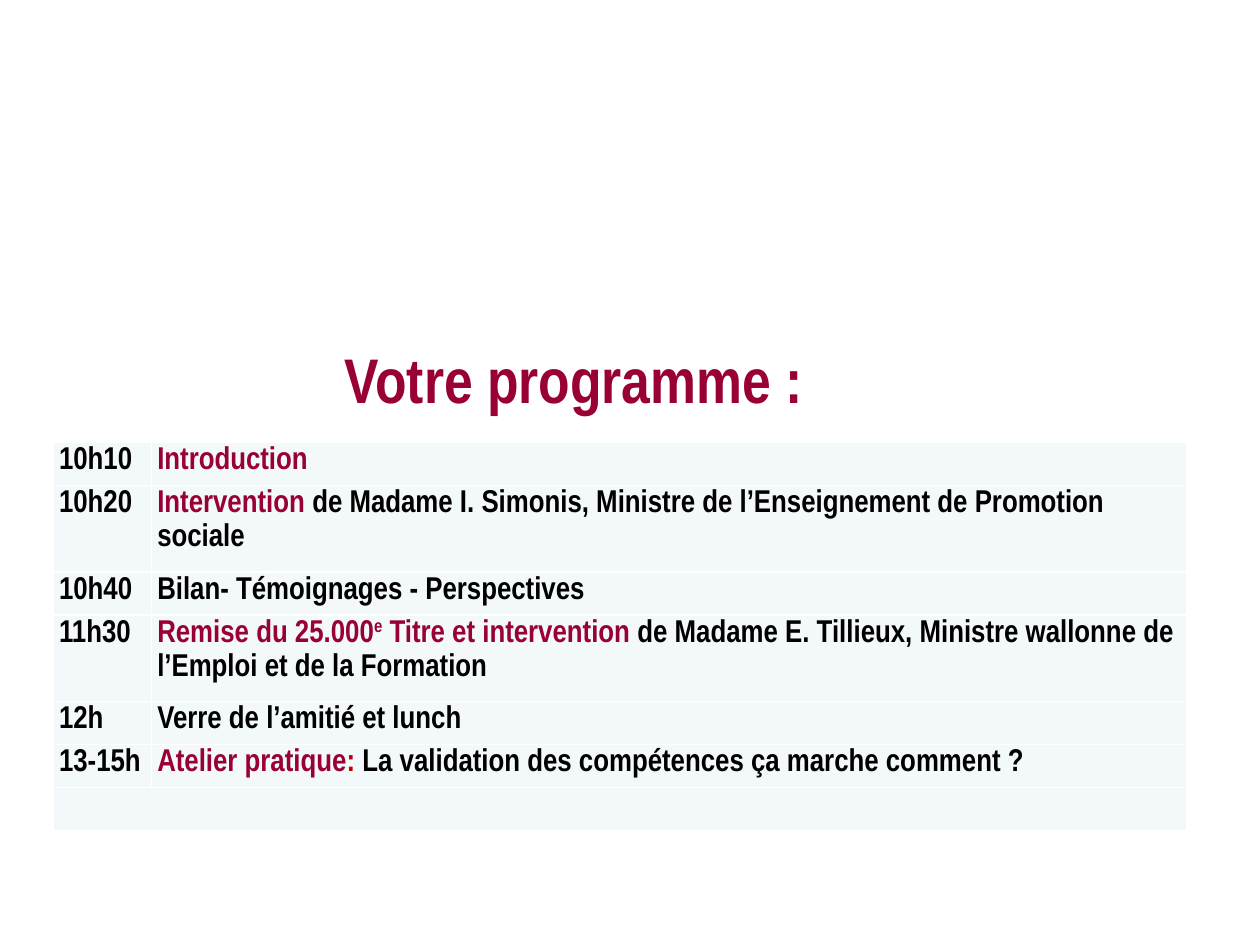
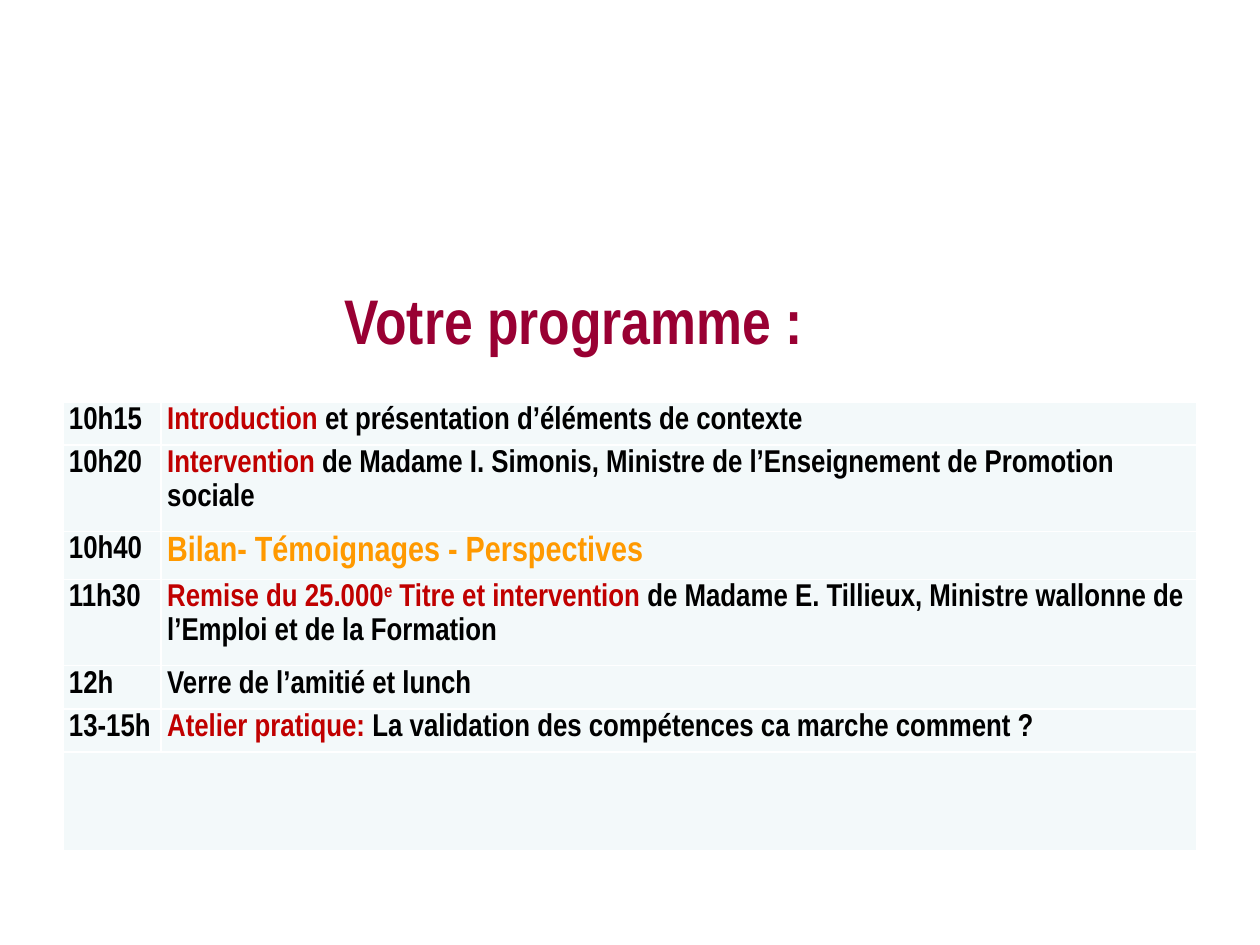
"""Build the two programme slides, each a title over a timetable."""
from lxml.etree import SubElement
from pptx import Presentation
from pptx.dml.color import RGBColor as Rgb
from pptx.enum.text import MSO_ANCHOR as Anchor, MSO_AUTO_SIZE as Auto, PP_ALIGN as Align
from pptx.oxml.ns import qn
from pptx.util import Cm, Pt

FACE = "Arial Narrow"
WINE, RED, GOLD = "990033", "C00000", "FF9900"
BLACK, WHITE, PALE = "000000", "FFFFFF", "F3F9FA"
LEFT, WIDE = 1.07, 22.86
COLS = (1.98, WIDE - 1.98)
LINE = 0.87


def paint(part, hue):
    """Set the colour of a font or a solid fill."""
    tint = part.color if hasattr(part, "color") else part.fore_color
    tint.rgb = Rgb.from_string(hue)


def style(para, size):
    """Set the shared face, weight and size on a paragraph."""
    font = para.font
    font.name, font.size, font.bold = FACE, Pt(size), True


def add_title(slide, top):
    """Place the title and format it."""
    box = slide.shapes.title
    box.left, box.top, box.width, box.height = Cm(LEFT), Cm(top), Cm(21), Cm(2.82)
    frame = box.text_frame
    frame.text = "Votre programme :"
    frame.auto_size, frame.vertical_anchor = Auto.NONE, Anchor.TOP
    para = frame.paragraphs[0]
    para.alignment = Align.CENTER
    style(para, 36)
    paint(para.font, WINE)


def add_edges(cell):
    """Draw thin white borders round a cell, ahead of its fill."""
    props = cell._tc.get_or_add_tcPr()
    for spot, side in enumerate(("lnL", "lnR", "lnT", "lnB")):
        edge = SubElement(props, qn("a:" + side), w=str(Pt(1)))
        fill = SubElement(edge, qn("a:solidFill"))
        SubElement(fill, qn("a:srgbClr"), val=WHITE)
        props.insert(spot, edge)


def dress(cell):
    """Set the fill, margins and borders of a cell."""
    cell.fill.solid()
    paint(cell.fill, PALE)
    cell.margin_left = cell.margin_right = Cm(0.12)
    cell.margin_top = cell.margin_bottom = 0
    add_edges(cell)


def write(cell, parts, size=18):
    """Fill a cell with coloured runs."""
    para = cell.text_frame.paragraphs[0]
    para.line_spacing = 1.15
    style(para, size)
    for text, hue, *rise in parts:
        run = para.add_run()
        run.text = text
        paint(run.font, hue)
        if rise:
            run.font._element.set("baseline", str(rise[0] * 1000))


def add_table(slide, left, top, rows, last):
    """Add the timetable with an empty merged row at its foot."""
    highs = [high for *_, high in rows] + [last]
    shape = slide.shapes.add_table(len(highs), 2, Cm(left), Cm(top), Cm(WIDE), Cm(sum(highs)))
    table = shape.table
    table.first_row = table.horz_banding = False
    for col, wide in zip(table.columns, COLS):
        col.width = Cm(wide)
    for row, high in zip(table.rows, highs):
        row.height = Cm(high)
        for cell in row.cells:
            dress(cell)
    for index, (hour, parts, size, _) in enumerate(rows):
        write(table.cell(index, 0), [(hour, BLACK)])
        write(table.cell(index, 1), parts, size)
    foot = len(rows)
    table.cell(foot, 0).merge(table.cell(foot, 1))


def plan(start, intro, mark, bilan, lab):
    """List the rows as hour, runs, text size and height."""
    hue, size, high = bilan
    return [
        (start, intro, 18, LINE),
        ("10h20", [("Intervention ", mark),
                   ("de Madame I. Simonis, Ministre de l’Enseignement de Promotion sociale", BLACK)],
         18, 2 * LINE),
        ("10h40", [("Bilan- Témoignages - Perspectives", hue)], size, high),
        ("11h30", [("Remise du 25.000", mark), ("e", mark, 30), (" Titre et intervention ", mark),
                   ("de Madame E. Tillieux, Ministre wallonne de l’Emploi et de la Formation", BLACK)],
         18, 2 * LINE),
        ("12h", [("Verre de l’amitié et lunch", BLACK)], 18, LINE),
        ("13-15h", lab, 18, LINE),
    ]


def main():
    """Build both slides and save the deck."""
    deck = Presentation()
    deck.slide_width, deck.slide_height = Cm(25.4), Cm(19.05)
    first = plan("10h10", [("Introduction", WINE)], WINE, (BLACK, 18, LINE),
                 [("Atelier pratique", WINE), (": ", RED),
                  ("La validation des compétences ça marche comment ?", BLACK)])
    second = plan("10h15", [("Introduction ", RED), ("et présentation d’éléments de contexte", BLACK)],
                  RED, (GOLD, 20, 0.97),
                  [("Atelier pratique: ", RED),
                   ("La validation des compétences ca marche comment ?", BLACK)])
    for head, left, top, rows, last in ((6.73, LEFT, 8.92, first, LINE),
                                        (5.54, 1.27, 8.1, second, 1.98)):
        slide = deck.slides.add_slide(deck.slide_layouts[5])
        add_title(slide, head)
        add_table(slide, left, top, rows, last)
    deck.save("out.pptx")


if __name__ == "__main__":
    main()
